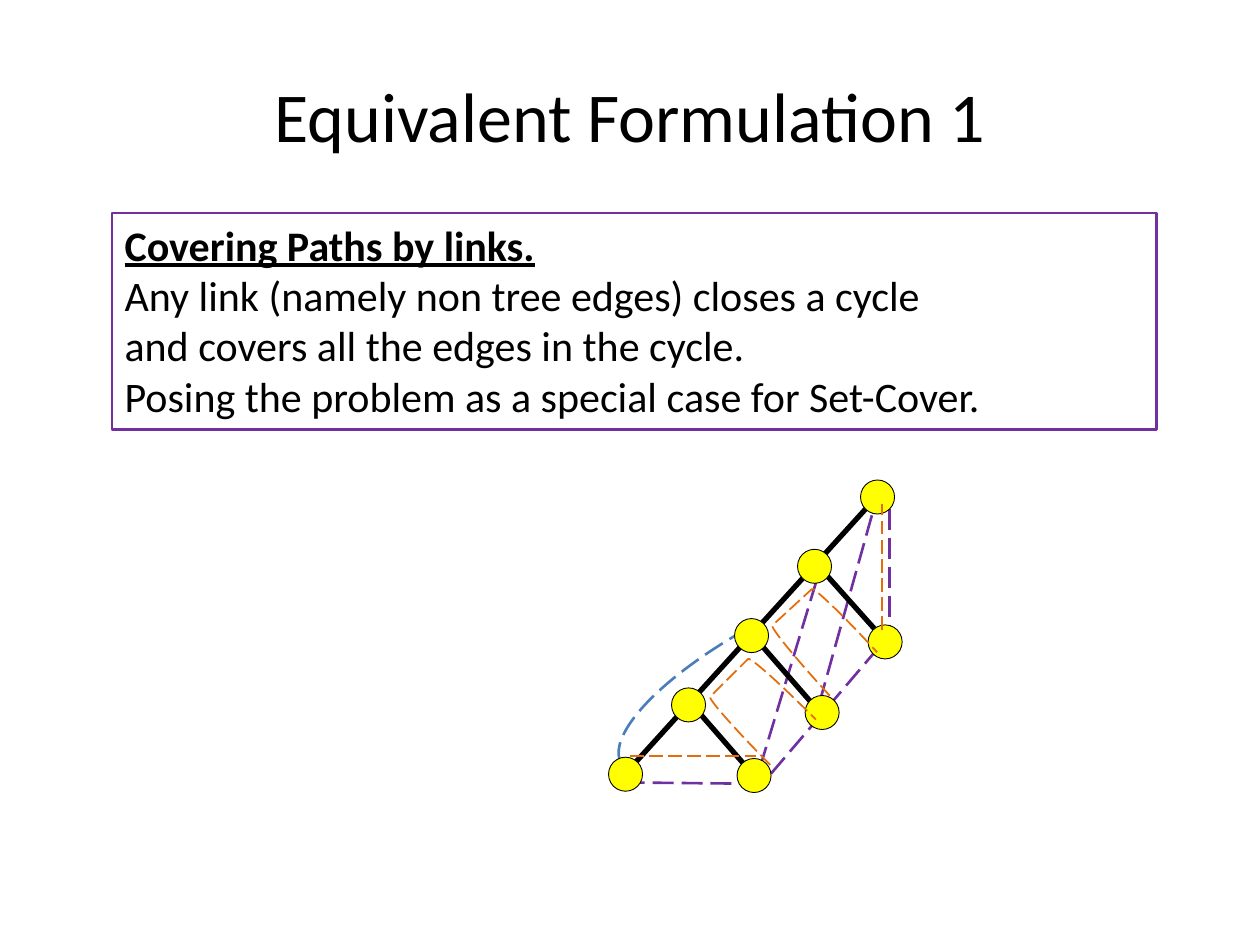
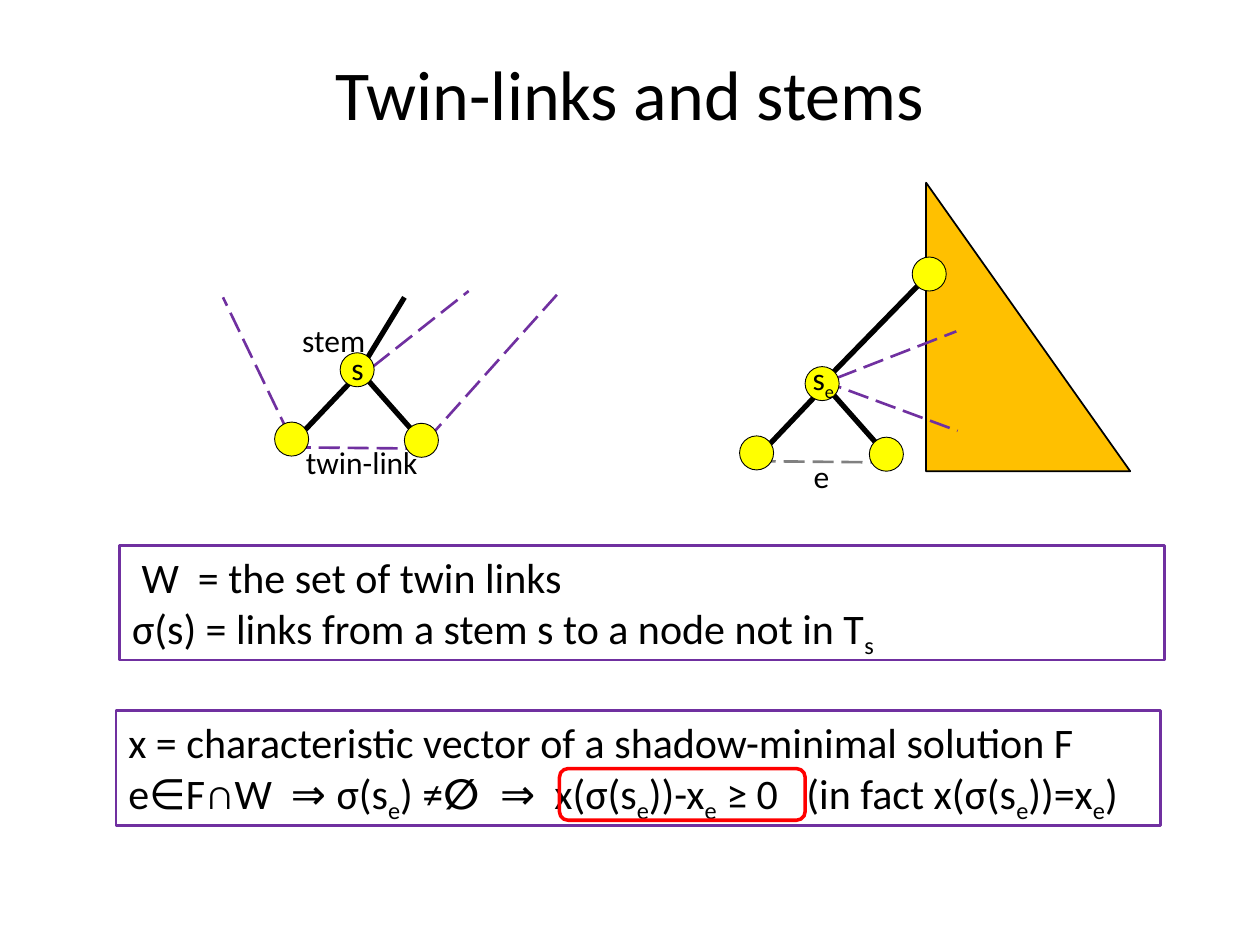
from dataclasses import dataclass

from pptx import Presentation
from pptx import util as u
from pptx.dml.color import RGBColor
from pptx.enum import dml, shapes, text
from pptx.oxml.ns import qn
from lxml import etree


@dataclass(frozen=True)
class Theme:
    font: str = "Calibri"
    symbol_font: str = "Roboto"
    title_size: int = 40
    body_size: int = 24
    label_size: int = 18
    ink: str = "000000"
    link: str = "7030A0"
    muted: str = "808080"
    arc: str = "4B7EBC"
    path_mark: str = "E46C0A"
    node: str = "FFFF00"
    subtree: str = "FFC000"
    highlight: str = "FF0000"


T = Theme()
KIND = shapes.MSO_SHAPE
NODE = 0.27


def outline(sp, color, width, dashed=False, fill=None):
    """Set the line of a shape or connector; clear or set a shape's fill."""
    sp.line.color.rgb = RGBColor.from_string(color)
    sp.line.width = u.Pt(width)
    if dashed:
        sp.line.dash_style = dml.MSO_LINE.LONG_DASH
    if sp.shape_type == shapes.MSO_SHAPE_TYPE.LINE:
        etree.SubElement(sp._element.spPr, qn("a:effectLst"))
        return
    sp.shadow.inherit = False
    if fill:
        sp.fill.solid()
        sp.fill.fore_color.rgb = RGBColor.from_string(fill)
    else:
        sp.fill.background()


def write(tf, paragraphs, size):
    """Fill a text frame; each paragraph is a list of (words, marks) runs."""
    for i, runs in enumerate(paragraphs):
        p = tf.paragraphs[0] if i == 0 else tf.add_paragraph()
        p.alignment = text.PP_ALIGN.LEFT
        for words, marks in runs:
            r = p.add_run()
            r.text = words
            r.font.name = T.symbol_font if "symbol" in marks else T.font
            r.font.size = u.Pt(size)
            r.font.color.rgb = RGBColor.from_string(T.ink)
            if "bold" in marks:
                r.font.bold = True
            if "underline" in marks:
                r.font.underline = True
            if "sub" in marks:
                r._r.get_or_add_rPr().set("baseline", "-25000")


prs = Presentation()
prs.slide_width, prs.slide_height = u.Inches(10), u.Inches(7.5)

# Titles
slides = []
for title, top in [("Equivalent Formulation 1", 0.28), ("Twin-links and stems", 0.11)]:
    s = prs.slides.add_slide(prs.slide_layouts[5])
    sp = s.shapes.title
    sp.left, sp.top, sp.width, sp.height = map(u.Inches, (0.5, top, 9, 1.25))
    tf = sp.text_frame
    tf.text = title
    tf.vertical_anchor = text.MSO_ANCHOR.MIDDLE
    p = tf.paragraphs[0]
    p.alignment = text.PP_ALIGN.CENTER
    font = p.runs[0].font
    font.name, font.size = T.font, u.Pt(T.title_size)
    font.color.rgb = RGBColor.from_string(T.ink)
    slides.append(s)
paths_slide, stems_slide = slides

# Framed statements
covering = [
    [("Covering Paths by links.", "bold underline")],
    [("Any link (namely non tree edges) closes a cycle", "")],
    [("and covers all the edges in the cycle.", "")],
    [("Posing the problem as a special case for Set-Cover.", "")],
]
definitions = [
    [(" W  = the set of twin links", "")],
    [("σ(s) = links from a stem s to a node not in T", ""), ("s", "sub")],
]
inequality = [
    [("x = characteristic vector of a shadow-minimal solution F", "")],
    [("e", ""), ("∈", "symbol"), ("F∩W  ", ""), ("⇒ ", "symbol"),
     ("σ(s", ""), ("e", "sub"), (") ≠", ""), ("∅  ", "symbol bold"),
     ("⇒", "symbol"), ("  x(σ(s", ""), ("e", "sub"), ("))-x", ""),
     ("e", "sub"), (" ≥ 0   (in fact x(σ(s", ""), ("e", "sub"),
     ("))=x", ""), ("e", "sub"), (")", "")],
]
for s, left, top, height, paragraphs in [
    (paths_slide, 0.89, 1.69, 1.72, covering),
    (stems_slide, 0.95, 4.33, 0.91, definitions),
    (stems_slide, 0.92, 5.64, 0.91, inequality),
]:
    sp = s.shapes.add_shape(KIND.RECTANGLE, *map(u.Inches, (left, top, 8.29, height)))
    outline(sp, T.link, 1.5)
    sp.text_frame.word_wrap = True
    sp.text_frame.vertical_anchor = text.MSO_ANCHOR.TOP
    write(sp.text_frame, paragraphs, T.body_size)

# Shapes that lie behind the trees
arc = paths_slide.shapes.add_shape(KIND.ARC, *map(u.Inches, (5.89, 3.67, 1.03, 3.3)))
arc.adjustments[0], arc.adjustments[1] = 162, 200.018
arc.rotation = 243.6
outline(arc, T.arc, 1.5, dashed=True)

subtree = stems_slide.shapes.add_shape(
    KIND.RIGHT_TRIANGLE, *map(u.Inches, (7.35, 1.45, 1.62, 2.29)))
outline(subtree, T.ink, 1, fill=T.subtree)

# Trees: links and edges as (x1, y1, x2, y2), nodes as (left, top)
path_links = [
    (4.95, 6.21, 5.94, 6.22), (6.92, 4.09, 6.52, 5.52), (6.48, 4.61, 6.02, 6.13),
    (7.06, 4.04, 7.06, 4.97), (6.12, 6.14, 6.93, 5.19),
]
path_edges = [
    (5.5, 5.6, 6.04, 6.22), (6.87, 4.04, 4.99, 6.11),
    (5.99, 5.06, 6.53, 5.68), (6.52, 4.52, 6.94, 4.99),
]
spine = [(4.83 + 0.5 * i, 6.01 - 0.55 * i) for i in range(5)]
path_nodes = spine + [(5.85, 6.02), (6.39, 5.52), (6.89, 4.96)]

stem_links = [
    (3.39, 3.49, 4.42, 2.34), (2.3, 3.46, 1.77, 2.36), (2.96, 2.91, 3.72, 2.31),
    (6.64, 3, 7.59, 2.63), (6.52, 3.02, 7.6, 3.42),
]
stem_edges = [(3.21, 2.36, 2.85, 2.95), (7.38, 2.17, 6.53, 3.04)]
stem_nodes = [(7.24, 2.04)]
twin_links = []
for dx, dy in [(0, 0), (3.69, 0.11)]:
    x, y = 2.86 + dx, 2.95 + dy
    stem_edges += [(x, y, x - 0.56, y + 0.59), (x, y, x + 0.54, y + 0.61)]
    twin_links.append((x - 0.56, y + 0.6, x + 0.44, y + 0.61))
    stem_nodes += [(2.7 + dx, 2.8 + dy), (2.18 + dx, 3.35 + dy), (3.21 + dx, 3.36 + dy)]

for s, lines, color, width, dashed in [
    (paths_slide, path_links, T.link, 1.5, True),
    (paths_slide, path_edges, T.ink, 3, False),
    (stems_slide, stem_links + twin_links[:1], T.link, 1.5, True),
    (stems_slide, twin_links[1:], T.muted, 1.5, True),
    (stems_slide, stem_edges, T.ink, 3, False),
]:
    for ends in lines:
        line = s.shapes.add_connector(shapes.MSO_CONNECTOR.STRAIGHT, *map(u.Inches, ends))
        outline(line, color, width, dashed)

for s, nodes in [(paths_slide, path_nodes), (stems_slide, stem_nodes)]:
    for left, top in nodes:
        sp = s.shapes.add_shape(KIND.OVAL, *map(u.Inches, (left, top, NODE, NODE)))
        outline(sp, T.ink, 0.5, fill=T.node)

# Covered paths
for left, top, angle in [(5.68, 5.38, 45.2), (6.17, 4.83, 47.4)]:
    sp = paths_slide.shapes.add_shape(
        KIND.LEFT_BRACKET, *map(u.Inches, (left, top, 0.72, 0.51)))
    sp.rotation = angle
    outline(sp, T.path_mark, 1, dashed=True)

STEPS = 12
for curve in [
    [(5.09, 6.21), (5.22, 5.98), (5.34, 5.74), (5.47, 5.74),
     (5.59, 5.74), (5.79, 6.15), (5.84, 6.22)],
    [(7.05, 4.91), (6.85, 4.76), (6.65, 4.61), (6.66, 4.46),
     (6.66, 4.31), (7, 4.07), (7.06, 4)],
]:
    points = []
    for start in (0, 3):
        a, b, c, d = curve[start:start + 4]
        for t in (i / STEPS for i in range(1, STEPS + 1)):
            weights = ((1 - t) ** 3, 3 * t * (1 - t) ** 2, 3 * t * t * (1 - t), t ** 3)
            points.append([sum(w * v for w, v in zip(weights, axis))
                           for axis in zip(a, b, c, d)])
    builder = paths_slide.shapes.build_freeform(*curve[0], scale=u.Inches(1))
    builder.add_line_segments(points, close=False)
    outline(builder.convert_to_shape(), T.path_mark, 1, dashed=True)

# Tree labels
for left, top, width, wrap, runs in [
    (2.33, 3.47, 1.13, False, [("twin-link", "")]),
    (2.69, 2.72, 0.3, True, [("s", "")]),
    (2.3, 2.5, 0.71, False, [("stem", "")]),
    (6.35, 2.8, 0.52, True, [("s", ""), ("e", "sub")]),
    (6.36, 3.58, 0.33, False, [("e", "")]),
]:
    sp = stems_slide.shapes.add_textbox(*map(u.Inches, (left, top, width, 0.4)))
    sp.text_frame.word_wrap = wrap
    write(sp.text_frame, [runs], T.label_size)

highlight = stems_slide.shapes.add_shape(
    KIND.ROUNDED_RECTANGLE, *map(u.Inches, (4.44, 6.1, 1.95, 0.41)))
outline(highlight, T.highlight, 2)

prs.save("out.pptx")
